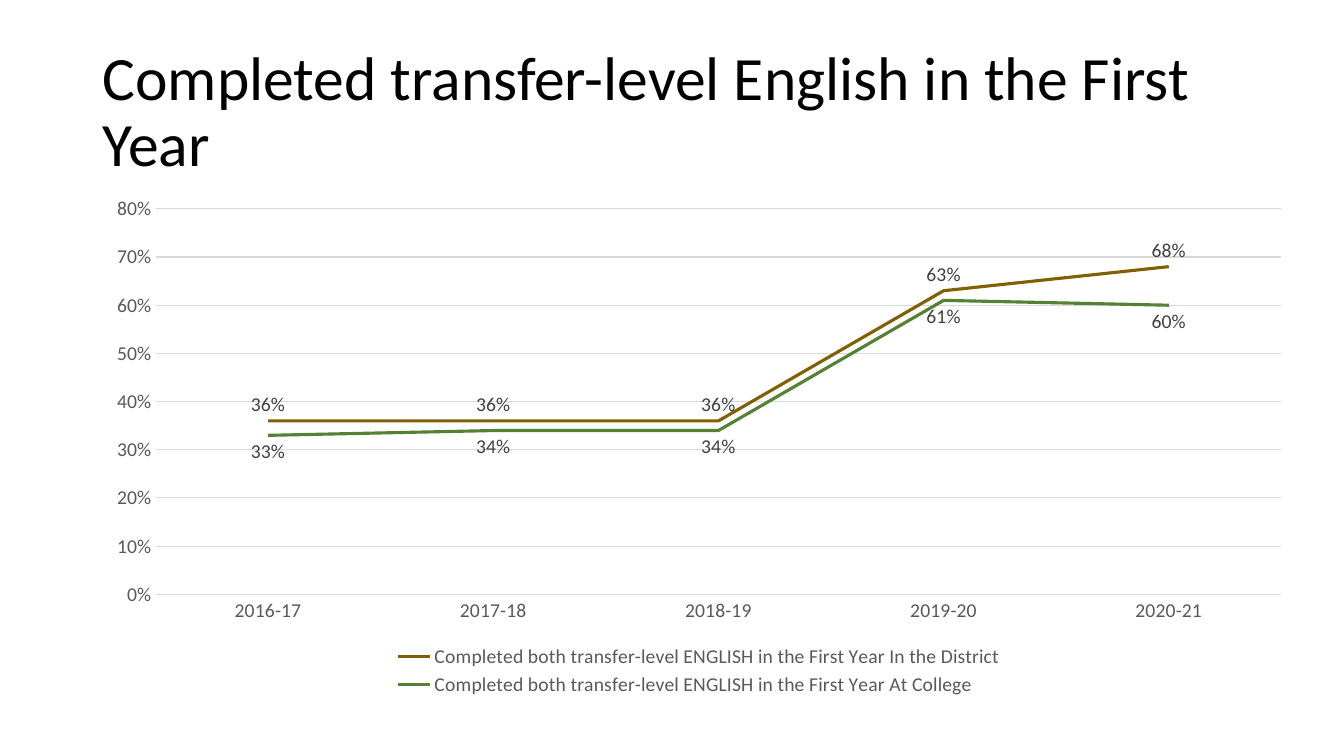
from dataclasses import dataclass

from pptx import Presentation
from pptx.chart.data import CategoryChartData
from pptx.dml.color import RGBColor
from pptx.enum.chart import (XL_CHART_TYPE, XL_LABEL_POSITION,
                             XL_LEGEND_POSITION, XL_MARKER_STYLE, XL_TICK_MARK)
from pptx.enum.text import MSO_ANCHOR
from pptx.util import Inches, Pt

LINE_CHART = XL_CHART_TYPE.LINE
ABOVE, BELOW = XL_LABEL_POSITION.ABOVE, XL_LABEL_POSITION.BELOW
LEGEND_BOTTOM = XL_LEGEND_POSITION.BOTTOM
NO_MARKER = XL_MARKER_STYLE.NONE
NO_TICK = XL_TICK_MARK.NONE
MIDDLE = MSO_ANCHOR.MIDDLE


@dataclass(frozen=True)
class Theme:
    font: str = "Calibri"
    title_size: int = 44
    chart_size: int = 14
    title: str = "000000"
    axis_text: str = "595959"
    label_text: str = "404040"
    grid: str = "D9D9D9"
    district: str = "806000"
    college: str = "548235"
    grid_width: float = 0.75
    series_width: float = 2.25


THEME = Theme()
TITLE = "Completed transfer-level English in the First Year"
YEARS = ["2016-17", "2017-18", "2018-19", "2019-20", "2020-21"]
MEASURE = "Completed both transfer-level ENGLISH in the First Year"
SERIES = [
    (f"{MEASURE} In the District", [0.36, 0.36, 0.36, 0.63, 0.68], THEME.district, ABOVE),
    (f"{MEASURE} At College", [0.33, 0.34, 0.34, 0.61, 0.6], THEME.college, BELOW),
]


def style_font(font, size, color):
    font.name = THEME.font
    font.size = Pt(size)
    font.color.rgb = RGBColor.from_string(color)


def style_line(line, color, width):
    line.color.rgb = RGBColor.from_string(color)
    line.width = Pt(width)


def add_title(page, text):
    box = page.shapes.add_textbox(Inches(0.92), Inches(0.4), Inches(12.15), Inches(1.45))
    frame = box.text_frame
    frame.word_wrap = True
    frame.vertical_anchor = MIDDLE
    para = frame.paragraphs[0]
    para.line_spacing = 0.9
    span = para.add_run()
    span.text = text
    style_font(span.font, THEME.title_size, THEME.title)


def style_axes(chart):
    years, shares = chart.category_axis, chart.value_axis
    for axis in (years, shares):
        axis.major_tick_mark = axis.minor_tick_mark = NO_TICK
        style_font(axis.tick_labels.font, THEME.chart_size, THEME.axis_text)
    style_line(years.format.line, THEME.grid, THEME.grid_width)
    shares.format.line.fill.background()
    shares.has_major_gridlines = True
    style_line(shares.major_gridlines.format.line, THEME.grid, THEME.grid_width)
    shares.minimum_scale, shares.maximum_scale, shares.major_unit = 0, 0.8, 0.1
    shares.tick_labels.number_format = "0%"
    shares.tick_labels.number_format_is_linked = False


def style_series(series, color, label_position):
    series.smooth = False
    series.marker.style = NO_MARKER
    style_line(series.format.line, color, THEME.series_width)
    labels = series.data_labels
    labels.show_value = True
    labels.position = label_position
    labels.number_format = "0%"
    labels.number_format_is_linked = False
    style_font(labels.font, THEME.chart_size, THEME.label_text)


def add_completion_chart(page):
    data = CategoryChartData(number_format="0%")
    data.categories = YEARS
    for name, values, _, _ in SERIES:
        data.add_series(name, values)
    chart = page.shapes.add_chart(LINE_CHART, Inches(0.92), Inches(1.85),
                                  Inches(12.03), Inches(5.1), data).chart
    style_font(chart.font, THEME.chart_size, THEME.title)
    chart.has_title = False
    chart.has_legend = True
    chart.legend.position = LEGEND_BOTTOM
    chart.legend.include_in_layout = False
    style_font(chart.legend.font, THEME.chart_size, THEME.axis_text)
    style_axes(chart)
    plot = chart.plots[0]
    plot.vary_by_categories = False
    for series, (_, _, color, position) in zip(plot.series, SERIES):
        style_series(series, color, position)


def main():
    deck = Presentation()
    deck.slide_width, deck.slide_height = Inches(13.33), Inches(7.5)
    page = deck.slides.add_slide(deck.slide_layouts[6])
    add_title(page, TITLE)
    add_completion_chart(page)
    deck.save("out.pptx")


if __name__ == "__main__":
    main()
